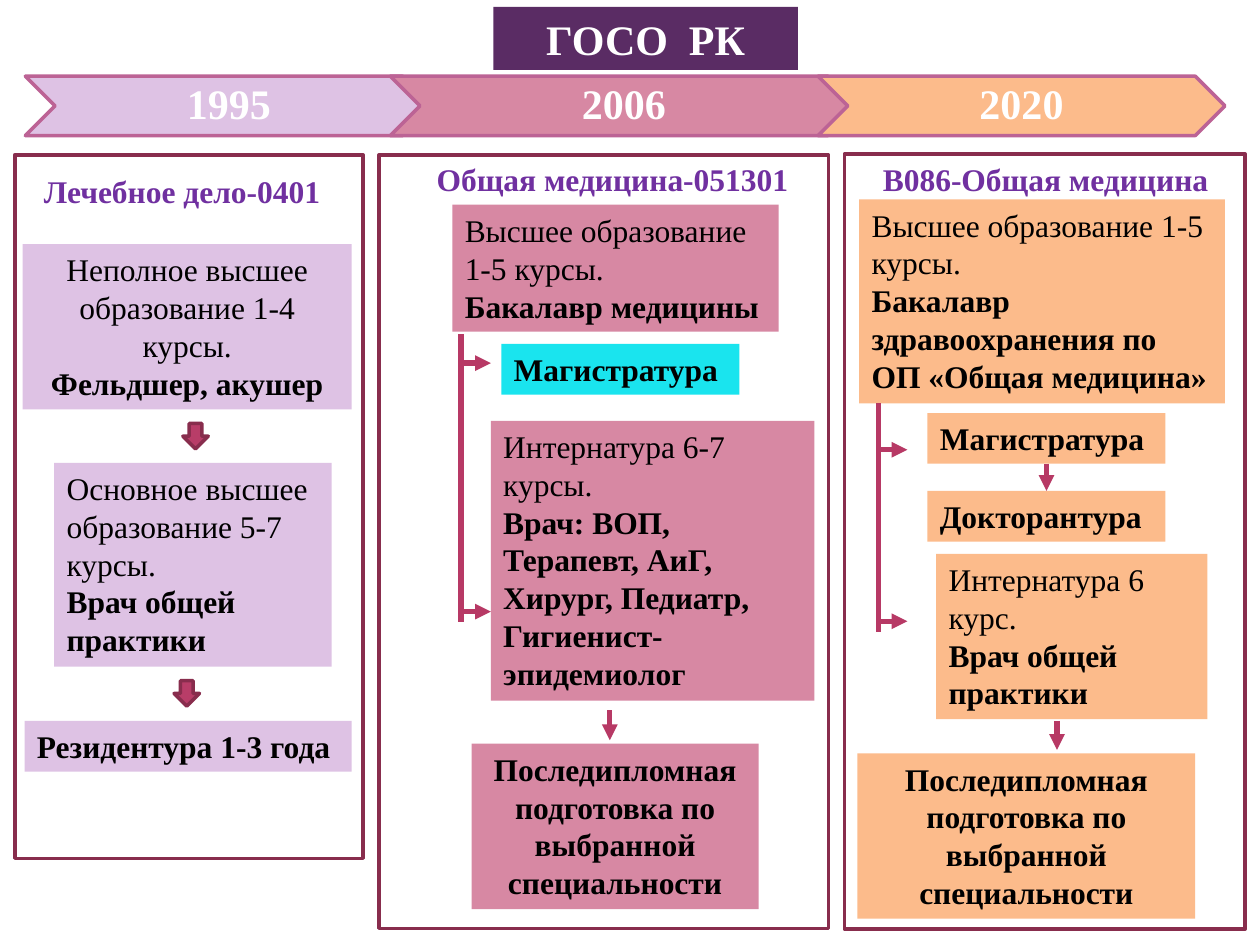
from lxml.etree import SubElement
from pptx import Presentation
from pptx.dml.color import RGBColor
from pptx.enum.shapes import MSO_CONNECTOR, MSO_SHAPE as Kind
from pptx.enum.text import MSO_ANCHOR as Anchor, MSO_AUTO_SIZE as Fit, PP_ALIGN as Align
from pptx.oxml.ns import qn
from pptx.util import Pt

FONT = "Times New Roman"
WHITE = RGBColor(0xFF, 0xFF, 0xFF)
BLACK = RGBColor(0, 0, 0)
PURPLE = RGBColor(0x70, 0x30, 0xA0)
PLUM = RGBColor(0x5A, 0x2C, 0x64)
LILAC = RGBColor(0xDE, 0xC2, 0xE4)
ROSE = RGBColor(0xD7, 0x88, 0xA3)
PEACH = RGBColor(0xFC, 0xBB, 0x8B)
CYAN = RGBColor(0x1A, 0xE4, 0xEE)
EDGE = RGBColor(0xBC, 0x63, 0x95)
WINE = RGBColor(0x88, 0x2D, 0x4D)
BERRY = RGBColor(0xB8, 0x3D, 0x68)
ARROW = RGBColor(0xB7, 0x39, 0x65)

TITLE = ("ГОСО  РК", (282, 4, 174, 36))
FINAL = "Последипломная подготовка по выбранной специальности"
MASTER = "Магистратура"
DOCTOR = "Докторантура"
L, C = Align.LEFT, Align.CENTER

# Boxes: place, alignment, plain text, bold text, fill (None: the column's)
COLUMNS = [
    {
        "year": "1995", "color": LILAC, "chevron": (14.5, 232.5),
        "frame": (8.5, 88.5, 199, 402),
        "head": ("Лечебное дело-0401", (18, 94.5, 194, 29), L),
        "boxes": [
            ((13, 139.5, 188, 94.5), C, "Неполное высшее образование 1-4 курсы.",
             "Фельдшер, акушер", None),
            ((31, 264.5, 158.5, 116.5), L, "Основное высшее образование 5-7 курсы.",
             "Врач общей практики", None),
            ((14, 412, 187, 29), L, "", "Резидентура 1-3 года", None),
        ],
    },
    {
        "year": "2006", "color": ROSE, "chevron": (223, 267),
        "frame": (216.5, 88.5, 257, 442),
        "head": ("Общая медицина-051301", (241, 88, 218, 29), C),
        "boxes": [
            ((258.5, 117, 186.5, 72.5), L, "Высшее образование 1-5 курсы.",
             "Бакалавр медицины", None),
            ((280.5, 240.5, 185, 160), L, "Интернатура 6-7 курсы.",
             "Врач: ВОП, Терапевт, АиГ, Хирург, Педиатр, Гигиенист-эпидемиолог", None),
            ((286.5, 196.5, 136, 29), L, "", MASTER, CYAN),
            ((269.5, 425, 164, 94.5), C, "", FINAL, None),
        ],
    },
    {
        "year": "2020", "color": PEACH, "chevron": (467.5, 232.5),
        "frame": (482.5, 88, 229, 443),
        "head": ("В086-Общая медицина", (493, 88, 209, 29), C),
        "boxes": [
            ((491, 114, 209, 116.5), L, "Высшее образование 1-5 курсы.",
             "Бакалавр здравоохранения по ОП «Общая медицина»", None),
            ((530, 236, 136, 29), L, "", MASTER, None),
            ((530, 280.5, 136, 29), L, "", DOCTOR, None),
            ((535, 316.5, 155, 94.5), L, "Интернатура 6 курс.",
             "Врач общей практики", None),
            ((490, 430.5, 193, 94.5), C, "", FINAL, None),
        ],
    },
]
BLOCKS = [(104.5, 242), (99.5, 389)]
# Stem x, top, bottom; branch heights; branch length
STEMS = [(263.5, 191, 355.5, (207.5, 349.5), 17),
         (502, 230.5, 361, (257, 355), 16.5)]
DROPS = [(348.5, 406, 423), (604, 412, 428.5)]

deck = Presentation()
deck.slide_width, deck.slide_height = Pt(720), Pt(540)
slide = deck.slides.add_slide(deck.slide_layouts[5])
shapes = slide.shapes


def paint(shape, fill, edge=None):
    if fill is None:
        shape.fill.background()
    else:
        shape.fill.solid()
        shape.fill.fore_color.rgb = fill
    if edge is None:
        shape.line.fill.background()
    else:
        shape.line.color.rgb = edge
        shape.line.width = Pt(2)


def draw(kind, place, fill, edge=None):
    shape = shapes.add_shape(kind, *map(Pt, place))
    shape.shadow.inherit = False
    paint(shape, fill, edge)
    return shape


def write(shape, lines, align, color, size=18, anchor=Anchor.TOP):
    """Fill a shape with (text, bold) paragraphs."""
    frame = shape.text_frame
    frame.word_wrap = True
    frame.vertical_anchor = anchor
    for i, (text, bold) in enumerate(lines):
        para = frame.add_paragraph() if i else frame.paragraphs[0]
        para.text = text
        para.alignment = align
        font = para.font
        font.name, font.size, font.bold = FONT, Pt(size), bold
        font.color.rgb = color
    return frame


def link(x1, y1, x2, y2, tip=True):
    line = shapes.add_connector(MSO_CONNECTOR.STRAIGHT, *map(Pt, (x1, y1, x2, y2)))
    line.line.color.rgb = ARROW
    line.line.width = Pt(3)
    if tip:
        SubElement(line.line._get_or_add_ln(), qn("a:tailEnd"), type="triangle")
    SubElement(line._element.spPr, qn("a:effectLst"))
    return line


text, place = TITLE
title = shapes.title
title.left, title.top, title.width, title.height = map(Pt, place)
paint(title, PLUM)
write(title, [(text, True)], C, WHITE, 24).auto_size = Fit.NONE

made = {}
for col in COLUMNS:
    left, width = col["chevron"]
    year = draw(Kind.CHEVRON, (left, 43.5, width, 34), col["color"], EDGE)
    frame = write(year, [(col["year"], True)], C, WHITE, 24, Anchor.MIDDLE)
    frame.margin_top = frame.margin_bottom = Pt(3)
    frame.paragraphs[0].line_spacing = 0.9

    draw(Kind.RECTANGLE, col["frame"], None, WINE)
    text, place, align = col["head"]
    head = shapes.add_textbox(*map(Pt, place))
    write(head, [(text, True)], align, PURPLE)

    for place, align, plain, bold, fill in col["boxes"]:
        box = draw(Kind.RECTANGLE, place, fill or col["color"])
        lines = [(plain, False)] if plain else []
        write(box, lines + [(bold, True)], align, BLACK).auto_size = Fit.SHAPE_TO_FIT_TEXT
        made[bold] = box

for x, y in BLOCKS:
    draw(Kind.DOWN_ARROW, (x, y, 14.5, 14.5), BERRY, WINE)
for x, top, low, branches, reach in STEMS:
    link(x, top, x, low, tip=False)
    for y in branches:
        link(x, y, x + reach, y)
for x, top, low in DROPS:
    link(x, top, x, low)
step = link(598, 265, 598, 280.5)
step.begin_connect(made[MASTER], 2)
step.end_connect(made[DOCTOR], 0)

deck.save("out.pptx")
